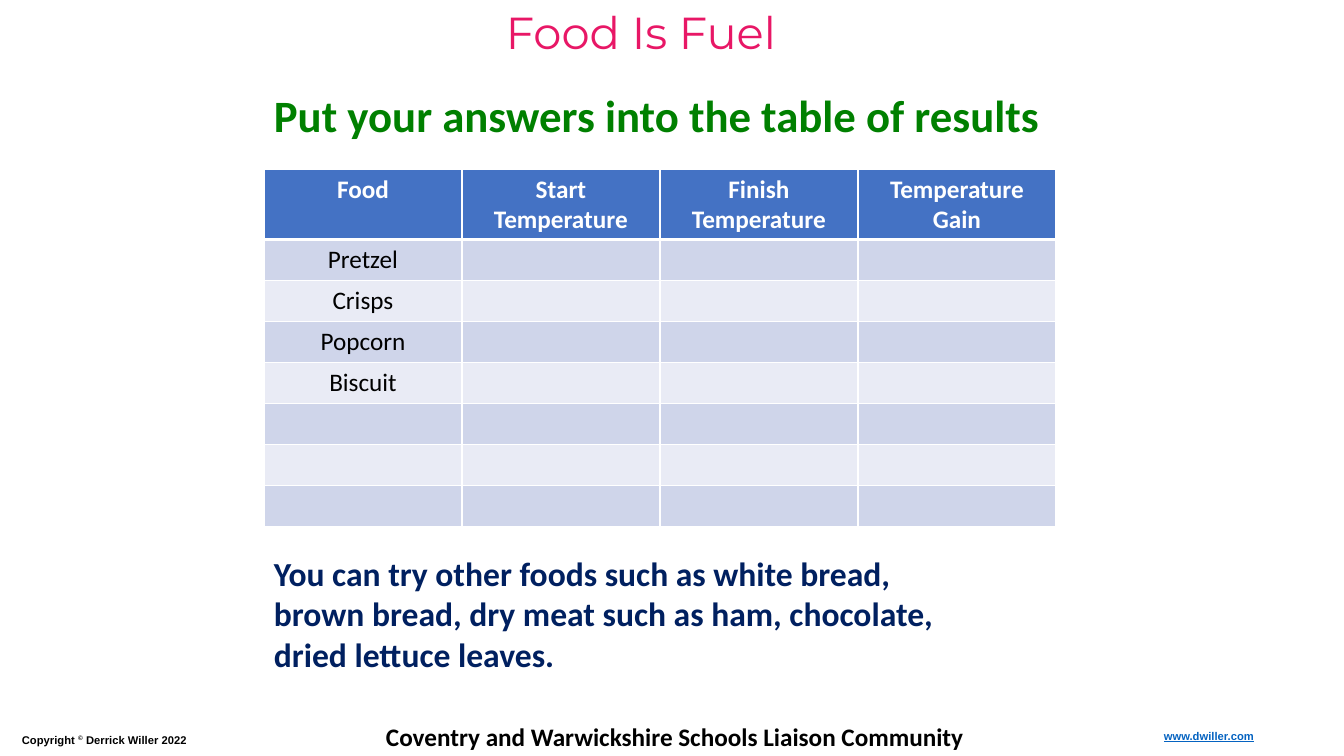
import pptx
import pptx.util
import pptx.dml.color
import pptx.enum.text
import pptx.oxml
import pptx.oxml.ns
from dataclasses import dataclass

ALIGN = pptx.enum.text.PP_ALIGN
TOP = pptx.enum.text.MSO_ANCHOR.TOP
SCALE = 914400 / 100.8


@dataclass(frozen=True)
class Theme:
    pink: str = "E81766"
    green: str = "008000"
    navy: str = "002060"
    black: str = "000000"
    white: str = "FFFFFF"
    link: str = "0563C1"
    head: str = "4472C4"
    bands: tuple = ("CFD5EA", "E9EBF5")
    sans: str = "Calibri"
    small: str = "Arial"
    fancy: str = "Montserrat"
    big: int = 32
    note: int = 24
    base: int = 18
    tiny: int = 8


THEME = Theme()
HEADS = ("Food", "Start Temperature", "Finish Temperature", "Temperature Gain")
FOODS = ("Pretzel", "Crisps", "Popcorn", "Biscuit", "", "", "")


def px(count):
    return pptx.util.Emu(round(count * SCALE))


def rgb(code):
    return pptx.dml.color.RGBColor.from_string(code)


def style(frame, size, color, name=THEME.sans, bold=True, align=ALIGN.LEFT):
    for para in frame.paragraphs:
        para.alignment = align
        font = para.font
        font.name, font.size, font.bold = name, pptx.util.Pt(size), bold
        font.color.rgb = rgb(color)


def add_text(slide, box, text, size, color, wrap=True, **looks):
    frame = slide.shapes.add_textbox(*map(px, box)).text_frame
    frame.word_wrap = wrap
    frame.text = text
    style(frame, size, color, **looks)
    return frame


def add_title(slide, box, text):
    title = slide.shapes.title
    title.left, title.top, title.width, title.height = map(px, box)
    frame = title.text_frame
    frame.text = text
    frame.vertical_anchor = TOP
    style(frame, THEME.big, THEME.pink, THEME.fancy, False, ALIGN.CENTER)


def add_edge(cell, side, width):
    space = pptx.oxml.ns.nsdecls("a")
    edge = pptx.oxml.parse_xml(
        f'<a:ln{side} {space} w="{pptx.util.Pt(width)}"><a:solidFill>'
        f'<a:srgbClr val="{THEME.white}"/></a:solidFill></a:ln{side}>'
    )
    cell._tc.get_or_add_tcPr().append(edge)


def fill_cell(cell, text, row):
    head = row == 0
    thick = {"T": row == 1, "B": head}
    for side in "LRTB":
        add_edge(cell, side, 3 if thick.get(side) else 1)
    cell.fill.solid()
    cell.fill.fore_color.rgb = rgb(THEME.head if head else THEME.bands[(row - 1) % 2])
    cell.text = text
    color = THEME.white if head else THEME.black
    style(cell.text_frame, THEME.base, color, bold=head, align=ALIGN.CENTER)


def add_grid(slide, box, tall, short):
    rows = [HEADS] + [(food, "", "", "") for food in FOODS]
    table = slide.shapes.add_table(len(rows), len(HEADS), *map(px, box)).table
    for col in table.columns:
        col.width = px(box[2] // len(HEADS))
    for row, texts in enumerate(rows):
        table.rows[row].height = px(short if row else tall)
        for col, text in enumerate(texts):
            fill_cell(table.cell(row, col), text, row)


def add_rights(slide, box):
    frame = add_text(slide, box, "Copyright ", THEME.tiny, THEME.black, name=THEME.small)
    para = frame.paragraphs[0]
    mark = para.add_run()
    mark.text = "©"
    mark._r.get_or_add_rPr().set("baseline", "30000")
    para.add_run().text = " Derrick Willer 2022"


def add_site(slide, box):
    frame = add_text(slide, box, "www.dwiller.com", THEME.tiny, THEME.link,
                     name=THEME.small, align=ALIGN.RIGHT)
    frame.paragraphs[0].font.underline = True


def main():
    deck = pptx.Presentation()
    deck.slide_width, deck.slide_height = px(1344), px(756)
    slide = deck.slides.add_slide(deck.slide_layouts[5])
    add_title(slide, (368, 0, 546, 65), "Food Is Fuel")
    add_text(slide, (264, 83, 793, 65), "Put your answers into the table of results",
             THEME.big, THEME.green, wrap=False)
    add_grid(slide, (264, 169, 792, 357), 70, 41)
    add_text(slide, (264, 548, 793, 132),
             "You can try other foods such as white bread, \v"
             "brown bread, dry meat such as ham, chocolate,\n"
             "dried lettuce leaves.", THEME.note, THEME.navy)
    add_text(slide, (376, 716, 603, 40),
             "Coventry and Warwickshire Schools Liaison Community",
             THEME.base, THEME.black, wrap=False)
    add_rights(slide, (12, 728, 570, 24))
    add_site(slide, (1129, 724, 135, 24))
    deck.save("out.pptx")


if __name__ == "__main__":
    main()
